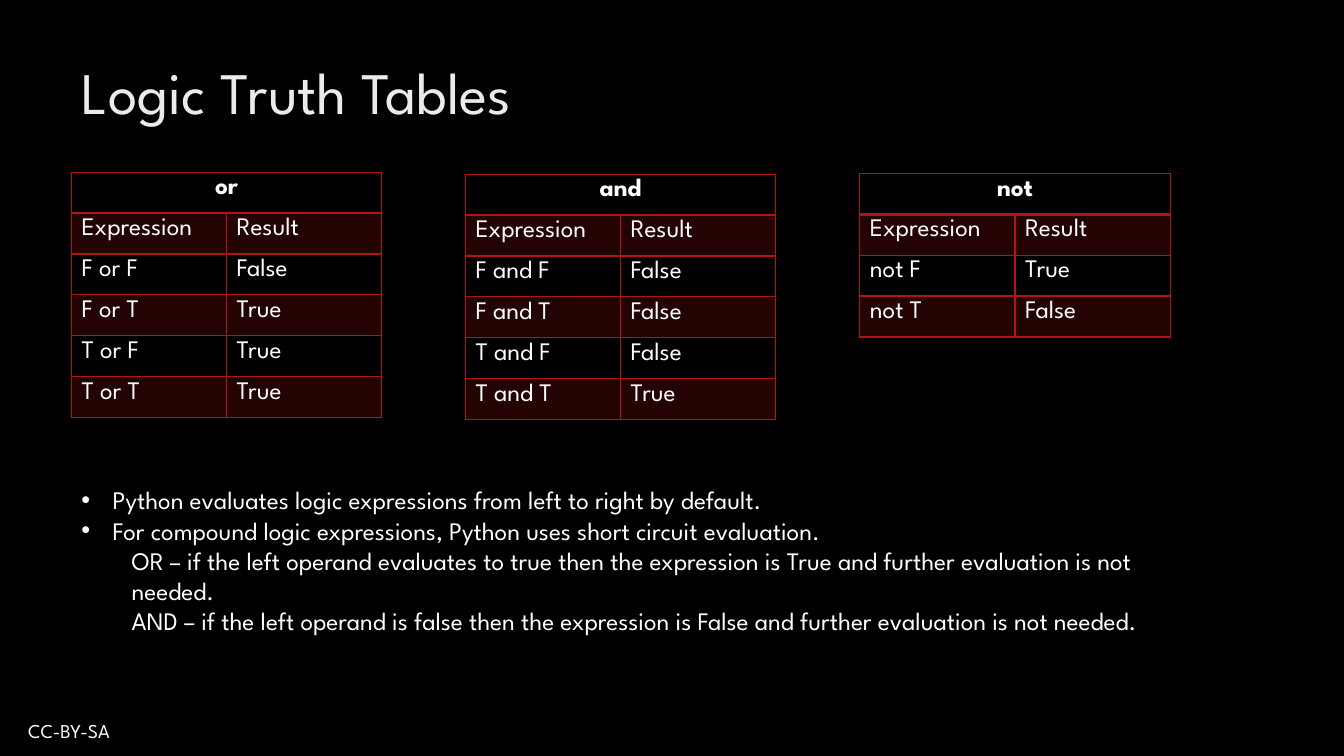
from dataclasses import dataclass

from lxml import etree
from pptx import Presentation
from pptx.dml.color import RGBColor
from pptx.enum.text import MSO_ANCHOR, PP_ALIGN
from pptx.oxml.ns import qn
from pptx.util import Cm, Pt

LEFT, CENTER = PP_ALIGN.LEFT, PP_ALIGN.CENTER
TOP = MSO_ANCHOR.TOP


@dataclass(frozen=True)
class Theme:
    """Colours, font and type sizes of the slide."""
    background: str = "000000"
    accent: str = "B01513"
    title: str = "EBEBEB"
    body: str = "FFFFFF"
    font: str = "League Spartan"
    title_size: int = 42
    body_size: int = 18
    footer_size: int = 14
    band_opacity: int = 20
    rule: int = 1
    header_rule: int = 2


THEME = Theme()
COLUMN_WIDTH, ROW_HEIGHT = Cm(3.91), Cm(1.03)
HEADINGS = ("Expression", "Result")
TRUTH_TABLES = (
    ("or", 1.8, 4.34, (("F or F", "False"), ("F or T", "True"),
                       ("T or F", "True"), ("T or T", "True"))),
    ("and", 11.73, 4.39, (("F and F", "False"), ("F and T", "False"),
                          ("T and F", "False"), ("T and T", "True"))),
    ("not", 21.67, 4.37, (("not F", "True"), ("not T", "False"))),
)
BULLETS = (
    "Python evaluates logic expressions from left to right by default.",
    "For compound logic expressions, Python uses short circuit evaluation.",
)
SHORT_CIRCUIT_RULES = (
    "OR – if the left operand evaluates to true then the expression is True "
    "and further evaluation is not needed.",
    "AND – if the left operand is false then the expression is False "
    "and further evaluation is not needed.",
)


def write(paragraph, text, size=THEME.body_size, color=THEME.body, bold=False, align=LEFT):
    """Put formatted text into a paragraph."""
    paragraph.alignment = align
    run = paragraph.add_run()
    run.text = text
    run.font.name = THEME.font
    run.font.size = Pt(size)
    run.font.bold = bold
    run.font.color.rgb = RGBColor.from_string(color)


def add_text_frame(slide, left, top, width, height):
    """Add a wrapping, top-anchored text box and return its frame."""
    frame = slide.shapes.add_textbox(Cm(left), Cm(top), Cm(width), Cm(height)).text_frame
    frame.word_wrap = True
    frame.vertical_anchor = TOP
    return frame


def indent(paragraph, margin, bullet=None):
    """Indent a paragraph and hang a bullet in the margin if one is given."""
    properties = paragraph._p.get_or_add_pPr()
    properties.set("marL", str(Cm(margin)))
    properties.set("indent", str(-Cm(margin) if bullet else 0))
    if bullet:
        etree.SubElement(properties, qn("a:buFont")).set("typeface", "Arial")
        etree.SubElement(properties, qn("a:buChar")).set("char", bullet)
    else:
        etree.SubElement(properties, qn("a:buNone"))


def add_color(parent, color, opacity=100):
    """Append a solid fill with the given opacity in percent."""
    fill = etree.SubElement(parent, qn("a:solidFill"))
    value = etree.SubElement(fill, qn("a:srgbClr"), val=color)
    if opacity < 100:
        etree.SubElement(value, qn("a:alpha"), val=str(opacity * 1000))


def style_cell(cell, banded, top_rule, bottom_rule):
    """Draw the borders of a cell and shade it if it is banded."""
    properties = cell._tc.get_or_add_tcPr()
    rules = {"L": THEME.rule, "R": THEME.rule, "T": top_rule, "B": bottom_rule}
    for side, weight in rules.items():
        line = etree.SubElement(properties, qn(f"a:ln{side}"), w=str(Pt(weight)))
        add_color(line, THEME.accent)
    if banded:
        add_color(properties, THEME.accent, THEME.band_opacity)
    else:
        cell.fill.background()


def add_truth_table(slide, operator, left, top, outcomes):
    """Add the truth table of one operator under a merged header."""
    rows = ((operator, ""), HEADINGS, *outcomes)
    table = slide.shapes.add_table(
        len(rows), len(HEADINGS), Cm(left), Cm(top),
        COLUMN_WIDTH * len(HEADINGS), ROW_HEIGHT * len(rows)).table
    table.horz_banding = False
    table.first_row = False
    for column in table.columns:
        column.width = COLUMN_WIDTH
    table.cell(0, 0).merge(table.cell(0, 1))
    for row_index, row in enumerate(rows):
        table.rows[row_index].height = ROW_HEIGHT
        header = row_index == 0
        for column_index, text in enumerate(row):
            cell = table.cell(row_index, column_index)
            style_cell(cell, banded=row_index % 2 == 1,
                       top_rule=THEME.header_rule if row_index == 1 else THEME.rule,
                       bottom_rule=THEME.header_rule if header else THEME.rule)
            if text:
                write(cell.text_frame.paragraphs[0], text, bold=header,
                      align=CENTER if header else LEFT)


def add_evaluation_notes(slide):
    """Add the bullets and the short circuit rules below them."""
    frame = add_text_frame(slide, 1.8, 12.09, 27.71, 4.88)
    notes = [(text, 0.79, "•") for text in BULLETS]
    notes += [(text, 1.27, None) for text in SHORT_CIRCUIT_RULES]
    for index, (text, margin, bullet) in enumerate(notes):
        paragraph = frame.add_paragraph() if index else frame.paragraphs[0]
        indent(paragraph, margin, bullet)
        write(paragraph, text)


def main():
    """Build the slide and save it."""
    presentation = Presentation()
    presentation.slide_width, presentation.slide_height = Cm(33.87), Cm(19.05)
    slide = presentation.slides.add_slide(presentation.slide_layouts[6])
    slide.background.fill.solid()
    slide.background.fill.fore_color.rgb = RGBColor.from_string(THEME.background)

    license_note = add_text_frame(slide, 0.46, 17.98, 14.4, 0.86)
    write(license_note.paragraphs[0], "CC-BY-SA", size=THEME.footer_size)
    title = add_text_frame(slide, 1.8, 1.27, 26.14, 3.89)
    write(title.paragraphs[0], "Logic Truth Tables",
          size=THEME.title_size, color=THEME.title)
    for truth_table in TRUTH_TABLES:
        add_truth_table(slide, *truth_table)
    add_evaluation_notes(slide)
    presentation.save("out.pptx")


if __name__ == "__main__":
    main()
